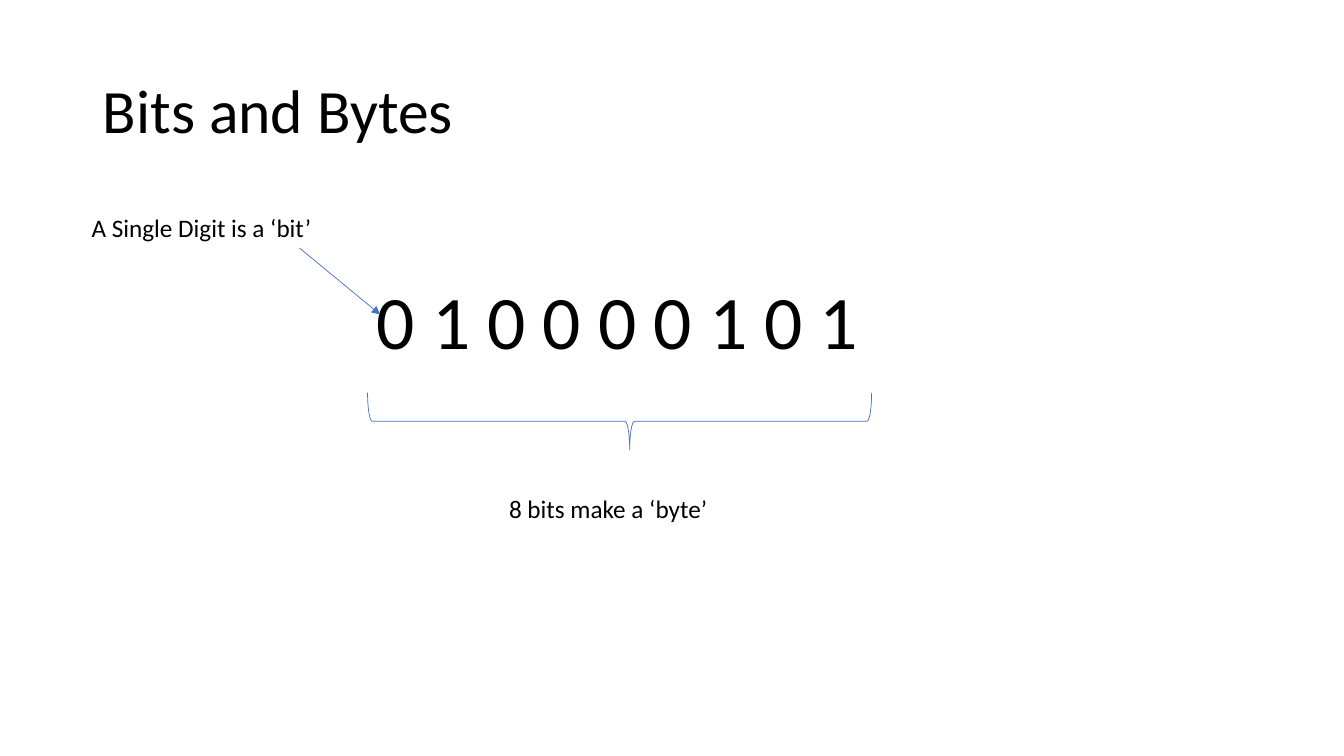
from dataclasses import dataclass

from lxml import etree
from pptx import Presentation
from pptx.dml.color import RGBColor
from pptx.enum import shapes, text
from pptx.oxml import ns
from pptx.util import Inches, Pt


@dataclass(frozen=True)
class Theme:
    font: str = "Calibri"
    ink: RGBColor = RGBColor(0, 0, 0)
    accent: RGBColor = RGBColor(0x44, 0x72, 0xC4)
    title_size: int = 44
    digit_size: int = 54
    label_size: int = 18
    line_width: float = 0.5


THEME = Theme()
TITLE = ("Bits and Bytes", (0.92, 0.4, 11.5, 1.45))
LABELS = [
    ("0 1 0 0 0 0 1 0 1", (3.64, 2.67, 6.06, 1.01), THEME.digit_size, True),
    ("A Single Digit is a ‘bit’", (0.81, 2.06, 2.4, 0.4), THEME.label_size, False),
    ("8 bits make a ‘byte’", (4.95, 4.84, 2.19, 0.4), THEME.label_size, False),
]
BIT_ARROW = (2.97, 2.46, 3.77, 3.12)
BYTE_BRACE = (5.86, 1.68, 0.57, 5)


def inches(values):
    return [Inches(value) for value in values]


def write(frame, wording, size):
    paragraph = frame.paragraphs[0]
    paragraph.alignment = text.PP_ALIGN.LEFT
    run = paragraph.add_run()
    run.text = wording
    run.font.name = THEME.font
    run.font.size = Pt(size)
    run.font.color.rgb = THEME.ink
    return paragraph


def style_line(line):
    line.color.rgb = THEME.accent
    line.width = Pt(THEME.line_width)


def add_title(slide):
    wording, box = TITLE
    heading = slide.shapes.title
    heading.left, heading.top, heading.width, heading.height = inches(box)
    heading.text_frame.vertical_anchor = text.MSO_ANCHOR.MIDDLE
    write(heading.text_frame, wording, THEME.title_size).line_spacing = 0.9


def add_label(slide, wording, box, size, wrap):
    frame = slide.shapes.add_textbox(*inches(box)).text_frame
    frame.word_wrap = wrap
    frame.auto_size = text.MSO_AUTO_SIZE.SHAPE_TO_FIT_TEXT
    write(frame, wording, size)


def add_bit_arrow(slide):
    arrow = slide.shapes.add_connector(
        shapes.MSO_CONNECTOR.STRAIGHT, *inches(BIT_ARROW)
    )
    style_line(arrow.line)
    etree.SubElement(arrow.line._get_or_add_ln(), ns.qn("a:tailEnd"), type="triangle")
    etree.SubElement(arrow._element.spPr, ns.qn("a:effectLst"))


def add_byte_brace(slide):
    brace = slide.shapes.add_shape(
        shapes.MSO_SHAPE.RIGHT_BRACE, *inches(BYTE_BRACE)
    )
    brace.rotation = 90
    brace.adjustments[0] = 0.083
    brace.adjustments[1] = 0.48
    brace.shadow.inherit = False
    brace.fill.background()
    style_line(brace.line)


def main():
    deck = Presentation()
    deck.slide_width, deck.slide_height = inches((13.33, 7.5))
    slide = deck.slides.add_slide(deck.slide_layouts.get_by_name("Title Only"))
    add_title(slide)
    digits, bit_label, byte_label = LABELS
    add_label(slide, *digits)
    add_bit_arrow(slide)
    add_label(slide, *bit_label)
    add_byte_brace(slide)
    add_label(slide, *byte_label)
    deck.save("out.pptx")


if __name__ == "__main__":
    main()
